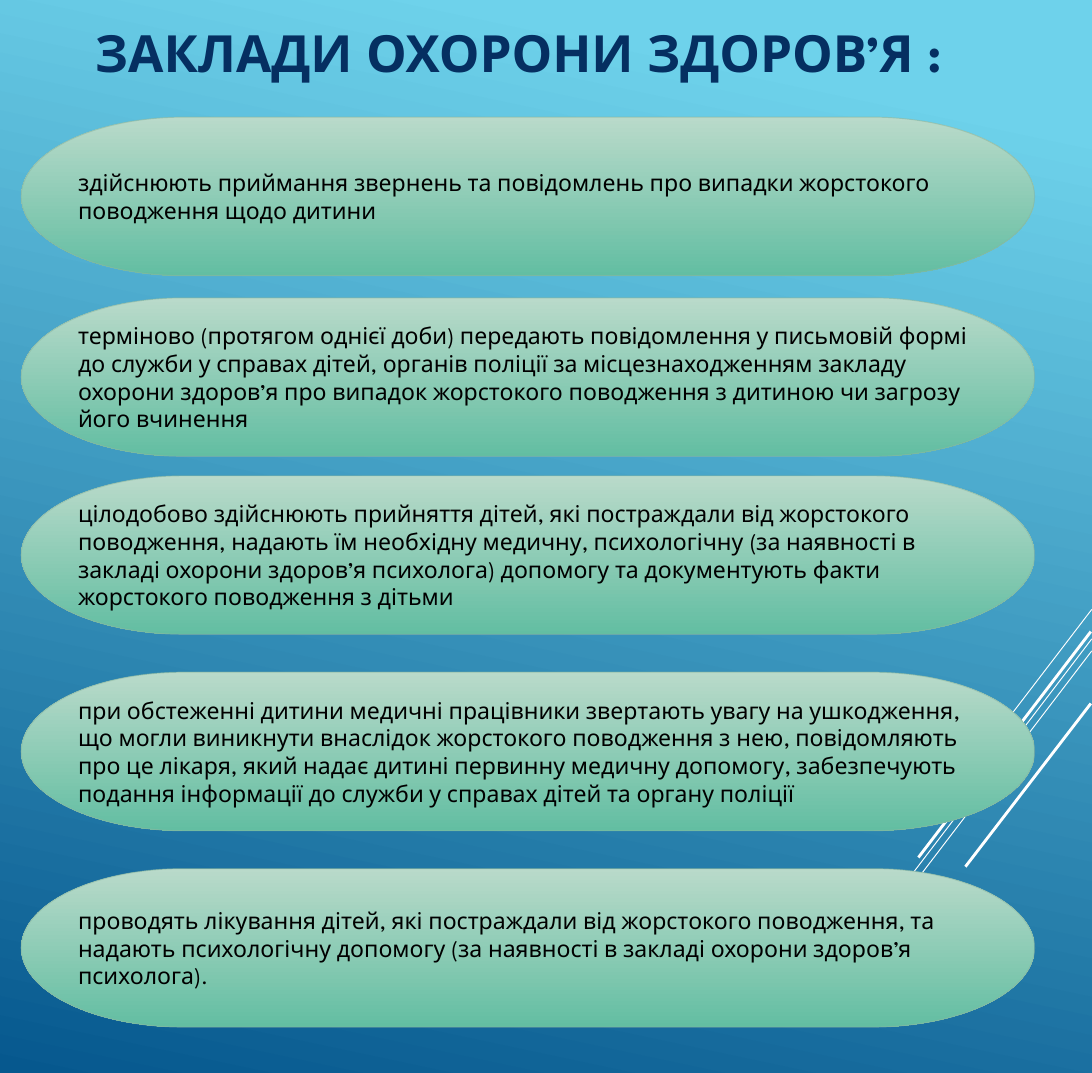
from lxml import etree
from pptx import Presentation
from pptx.dml.color import RGBColor
from pptx.enum.shapes import MSO_CONNECTOR, MSO_SHAPE
from pptx.enum.text import MSO_ANCHOR as ANCHOR, MSO_AUTO_SIZE as AUTO, PP_ALIGN as ALIGN
from pptx.oxml.ns import qn
from pptx.util import Cm, Inches, Pt

COLORS = {
    "sky": "6ED2EB", "deep": "06588E", "title": "052F61", "text": "000000",
    "pill_top": "B9DACA", "pill_bottom": "63BEA2", "pill_line": "8AB7A1",
    "white": "FFFFFF",
}
FONT = "League Spartan"


def write_text(sp, text, size, color, bold=False):
    tf = sp.text_frame
    tf.word_wrap = True
    tf.auto_size = AUTO.NONE
    tf.vertical_anchor = ANCHOR.MIDDLE
    p = tf.paragraphs[0]
    p.alignment = ALIGN.LEFT
    p.line_spacing = 1.0
    r = p.add_run()
    r.text = text
    r.font.name = FONT
    r.font.size = Pt(size)
    r.font.bold = bold
    r.font.color.rgb = RGBColor.from_string(COLORS[color])


def fill_gradient(fill, angle, stops):
    fill.gradient()
    fill.gradient_angle = 360 - angle  # clockwise to counter-clockwise
    for stop, (position, color) in zip(fill.gradient_stops, stops):
        stop.position = position
        stop.color.rgb = RGBColor.from_string(COLORS[color])


# Slide of 11.84 by 11.64 inches, a metric format
prs = Presentation()
prs.slide_width = Cm(30.08)
prs.slide_height = Cm(29.56)
s = prs.slides.add_slide(prs.slide_layouts[5])

# Background
fill_gradient(s.background.fill, 102, [(0.1, "sky"), (1, "deep")])

# Diagonal lines at the right edge: x1, y1, x2, y2, width
diagonals = [
    (11.84, 6.61, 10.86, 7.89, 0.75),
    (11.84, 6.93, 8.64, 11.12, 0.75),
    (11.84, 7.06, 9.8, 9.73, 0.75),
    (11.83, 6.85, 9.96, 9.3, 2.25),
    (11.83, 7.63, 10.47, 9.4, 2.25),
]
for *ends, width in diagonals:
    line = s.shapes.add_connector(MSO_CONNECTOR.STRAIGHT, *map(Inches, ends))
    line.line.color.rgb = RGBColor.from_string(COLORS["white"])
    line.line.width = Pt(width)
    etree.SubElement(line._element.spPr, qn("a:effectLst"))

# Title
title = s.shapes.title
title.left, title.top = Inches(0.93), Inches(0)
title.width, title.height = Inches(9.58), Inches(1.12)
write_text(title, "ЗАКЛАДИ ОХОРОНИ ЗДОРОВ’Я :", 40, "title", bold=True)

# Duties of the health care institutions: top, text
duties = [
    (1.27, "здійснюють приймання звернень та повідомлень про випадки жорстокого "
           "поводження щодо дитини"),
    (3.23, "терміново (протягом однієї доби) передають повідомлення у письмовій формі "
           "до служби у справах дітей, органів поліції за місцезнаходженням закладу "
           "охорони здоров’я про випадок жорстокого поводження з дитиною чи загрозу "
           "його вчинення"),
    (5.16, "цілодобово здійснюють прийняття дітей, які постраждали від жорстокого "
           "поводження, надають їм необхідну медичну, психологічну (за наявності в "
           "закладі охорони здоров’я психолога) допомогу та документують факти "
           "жорстокого поводження з дітьми"),
    (7.29, "при обстеженні дитини медичні працівники звертають увагу на ушкодження, "
           "що могли виникнути внаслідок жорстокого поводження з нею, повідомляють "
           "про це лікаря, який надає дитині первинну медичну допомогу, забезпечують "
           "подання інформації до служби у справах дітей та органу поліції"),
    (9.42, "проводять лікування дітей, які постраждали від жорстокого поводження, та "
           "надають психологічну допомогу (за наявності в закладі охорони здоров’я "
           "психолога)."),
]
for top, text in duties:
    sp = s.shapes.add_shape(MSO_SHAPE.FLOWCHART_TERMINATOR, Inches(0.23), Inches(top),
                            Inches(10.99), Inches(1.72))
    sp.shadow.inherit = False
    fill_gradient(sp.fill, 90, [(0, "pill_top"), (1, "pill_bottom")])
    sp.line.color.rgb = RGBColor.from_string(COLORS["pill_line"])
    sp.line.width = Pt(0.75)
    line_color = sp.line._ln.find(".//" + qn("a:srgbClr"))
    etree.SubElement(line_color, qn("a:alpha"), val="60000")
    write_text(sp, text, 18, "text")

prs.save("out.pptx")
